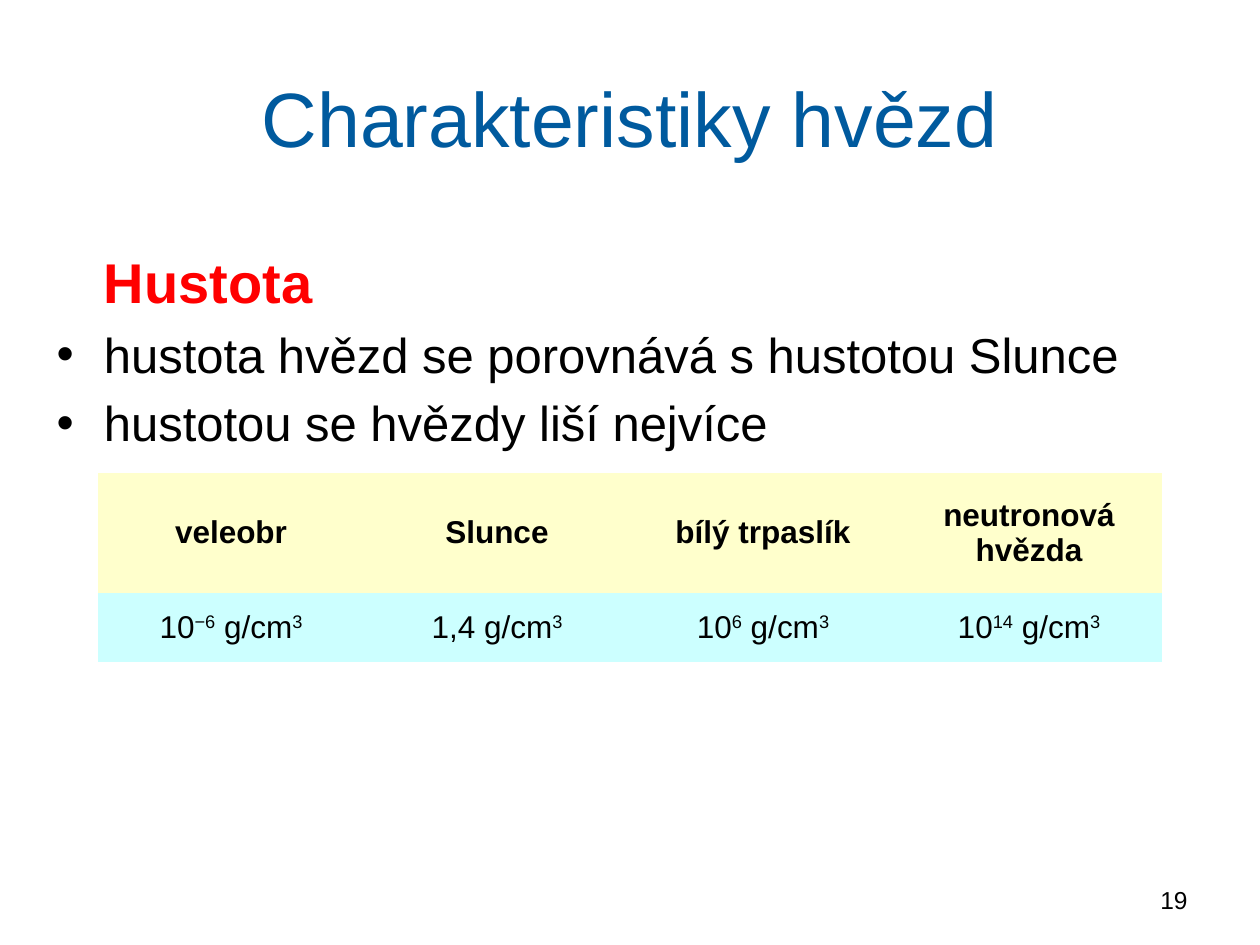
from pptx import Presentation
from pptx.dml.color import RGBColor
from pptx.enum.text import MSO_ANCHOR, MSO_AUTO_SIZE, PP_ALIGN
from pptx.oxml.ns import qn
from pptx.oxml.xmlchemy import OxmlElement
from pptx.util import Emu, Pt

COLORS = {"title": "005A9E", "heading": "FF0000", "text": "000000",
          "header": "FFFFCC", "values": "CCFFFF"}
FONT = "Arial"
NO_GRID = "{2D5ABB26-0587-4C30-8999-92F81FD0307C}"
STARS = ["veleobr", "Slunce", "bílý trpaslík", "neutronová hvězda"]
DENSITIES = [("10", "−6", " g/cm", "3"), ("1,4 g/cm", "3"),
             ("10", "6", " g/cm", "3"), ("10", "14", " g/cm", "3")]


def px(length):
    """Convert pixels at 126 per inch to EMU."""
    return Emu(round(length * 914400 / 126))


class StarSlide:
    """Hold the deck style and the current slide."""

    def __init__(self, deck):
        """Add a title and content slide."""
        self.slide = deck.slides.add_slide(deck.slide_layouts[1])

    def place(self, shape, left, top, width, height):
        """Move and size a shape."""
        shape.left, shape.top = px(left), px(top)
        shape.width, shape.height = px(width), px(height)

    def styled_run(self, paragraph, text, size, color="text", bold=False, raised=False):
        """Append one styled run."""
        run = paragraph.add_run()
        run.text = text
        run.font.name, run.font.size, run.font.bold = FONT, Pt(size), bold
        run.font.color.rgb = RGBColor.from_string(COLORS[color])
        if raised:
            run._r.get_or_add_rPr().set("baseline", "30000")

    def title(self, text, *box):
        """Fill the title placeholder."""
        title = self.slide.shapes.title
        self.place(title, *box)
        title.text_frame.vertical_anchor = MSO_ANCHOR.MIDDLE
        heading = title.text_frame.paragraphs[0]
        heading.alignment = PP_ALIGN.CENTER
        self.styled_run(heading, text, 44, "title")

    def body(self, heading, points, *box):
        """Fill the body placeholder with a heading and bullets."""
        body = self.slide.placeholders[1]
        self.place(body, *box)
        frame = body.text_frame
        frame.auto_size = MSO_AUTO_SIZE.NONE
        first = frame.paragraphs[0]
        properties = first._p.get_or_add_pPr()
        properties.set("indent", "0")
        properties.append(OxmlElement("a:buNone"))
        first.space_before = Pt(0)
        self.styled_run(first, heading, 32, "heading", bold=True)
        for point in points:
            self.styled_run(frame.add_paragraph(), point, 28)

    def table(self, rows, heights, fills, left, top, column_width):
        """Add a table whose cells alternate plain and raised runs."""
        columns = len(rows[0])
        table = self.slide.shapes.add_table(
            len(rows), columns, px(left), px(top),
            px(column_width * columns), px(sum(heights))).table
        table.first_row = table.horz_banding = False
        table._tbl.tblPr.find(qn("a:tableStyleId")).text = NO_GRID
        for column in table.columns:
            column.width = px(column_width)
        for r, (entries, height, fill) in enumerate(zip(rows, heights, fills)):
            table.rows[r].height = px(height)
            for c, parts in enumerate(entries):
                self.cell(table.cell(r, c), parts, fill, bold=r == 0)

    def cell(self, cell, parts, fill, bold):
        """Fill one table cell."""
        cell.fill.solid()
        cell.fill.fore_color.rgb = RGBColor.from_string(COLORS[fill])
        cell.margin_left = cell.margin_right = px(6)
        cell.margin_top = cell.margin_bottom = px(6)
        cell.vertical_anchor = MSO_ANCHOR.MIDDLE
        paragraph = cell.text_frame.paragraphs[0]
        paragraph.alignment = PP_ALIGN.CENTER
        for i, part in enumerate(parts):
            self.styled_run(paragraph, part, 18, bold=bold, raised=i % 2 == 1)

    def page_number(self, text, *box):
        """Add the right-aligned page number."""
        frame = self.slide.shapes.add_textbox(*map(px, box)).text_frame
        frame.word_wrap = True
        number = frame.paragraphs[0]
        number.alignment = PP_ALIGN.RIGHT
        self.styled_run(number, text, 14)


def main():
    """Build and save the slide."""
    deck = Presentation()
    deck.slide_width, deck.slide_height = px(1260), px(945)
    density = StarSlide(deck)
    density.title("Charakteristiky hvězd", 63, 38, 1134, 158)
    density.body("Hustota", ["hustota hvězd se porovnává s hustotou Slunce",
                             "hustotou se hvězdy liší nejvíce"], 44, 241, 1134, 617)
    density.table([[(star,) for star in STARS], DENSITIES], [120, 69],
                  ["header", "values"], 98, 473, 266)
    density.page_number("19", 906, 879, 294, 66)
    deck.save("out.pptx")


if __name__ == "__main__":
    main()
